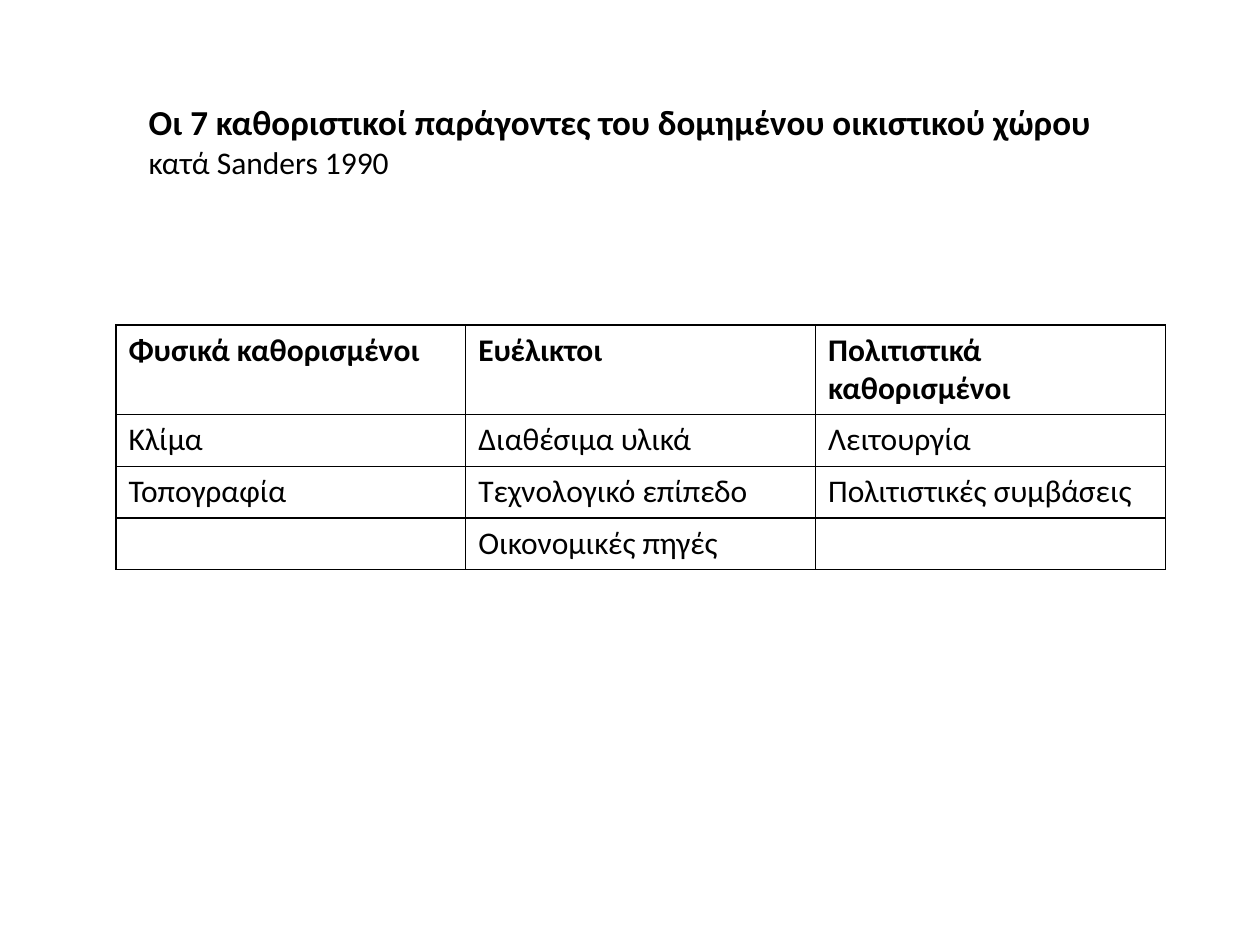
"""Build a slide with a title and a table of the factors shaping built space."""
import pptx
import pptx.util
import pptx.dml.color
import pptx.enum.text
import pptx.oxml
import pptx.oxml.ns

COLORS = {"text": "000000", "border": "000000", "paper": "FFFFFF"}
FONT = "Calibri"
WIDTH, HEIGHT = pptx.util.Inches(10), pptx.util.Inches(7.5)
TITLE_LINES = [
    ("Οι 7 καθοριστικοί παράγοντες του δομημένου οικιστικού χώρου", 20, True),
    ("κατά Sanders 1990", 18, False),
]
FACTORS = [
    ["Φυσικά καθορισμένοι", "Ευέλικτοι", "Πολιτιστικά καθορισμένοι"],
    ["Κλίμα", "Διαθέσιμα υλικά", "Λειτουργία"],
    ["Τοπογραφία", "Τεχνολογικό επίπεδο", "Πολιτιστικές συμβάσεις"],
    ["", "Οικονομικές πηγές", ""],
]


def color(name):
    return pptx.dml.color.RGBColor.from_string(COLORS[name])


def format_font(font, size, bold):
    font.name = FONT
    font.size = pptx.util.Pt(size)
    font.bold = bold
    font.color.rgb = color("text")


def add_title(page):
    title = page.shapes.title
    title.left, title.top = int(WIDTH * 0.108), int(HEIGHT * 0.1)
    title.width, title.height = int(WIDTH * 0.808), pptx.util.Inches(0.74)
    frame = title.text_frame
    frame.text = "\n".join(text for text, size, bold in TITLE_LINES)
    frame.word_wrap = True
    frame.auto_size = pptx.enum.text.MSO_AUTO_SIZE.NONE
    frame.vertical_anchor = pptx.enum.text.MSO_ANCHOR.TOP
    for para, (text, size, bold) in zip(frame.paragraphs, TITLE_LINES):
        para.alignment = pptx.enum.text.PP_ALIGN.LEFT
        format_font(para.runs[0].font, size, bold)


def add_borders(cell):
    properties = cell._tc.get_or_add_tcPr()
    for index, side in enumerate(("lnL", "lnR", "lnT", "lnB")):
        line = pptx.oxml.parse_xml(
            f'<a:{side} {pptx.oxml.ns.nsdecls("a")} w="{pptx.util.Pt(1)}"><a:solidFill>'
            f'<a:srgbClr val="{COLORS["border"]}"/></a:solidFill></a:{side}>')
        properties.insert(index, line)


def format_cell(cell, text, bold):
    cell.text = text
    cell.fill.solid()
    cell.fill.fore_color.rgb = color("paper")
    add_borders(cell)
    for para in cell.text_frame.paragraphs:
        format_font(para.font, 18, bold)
        for span in para.runs:
            format_font(span.font, 18, bold)


def add_factor_table(page):
    row_height = pptx.util.Inches(0.41)
    header_height = pptx.util.Inches(0.7)
    table = page.shapes.add_table(
        len(FACTORS), len(FACTORS[0]), int(WIDTH * 0.092), int(HEIGHT * 0.344),
        int(WIDTH * 0.833), header_height + row_height * (len(FACTORS) - 1)).table
    table.horz_banding = False
    for index, texts in enumerate(FACTORS):
        table.rows[index].height = row_height if index else header_height
        for column, text in enumerate(texts):
            format_cell(table.cell(index, column), text, index == 0)


def main():
    deck = pptx.Presentation()
    deck.slide_width, deck.slide_height = WIDTH, HEIGHT
    page = deck.slides.add_slide(deck.slide_layouts[5])
    add_title(page)
    add_factor_table(page)
    deck.save("out.pptx")


if __name__ == "__main__":
    main()
